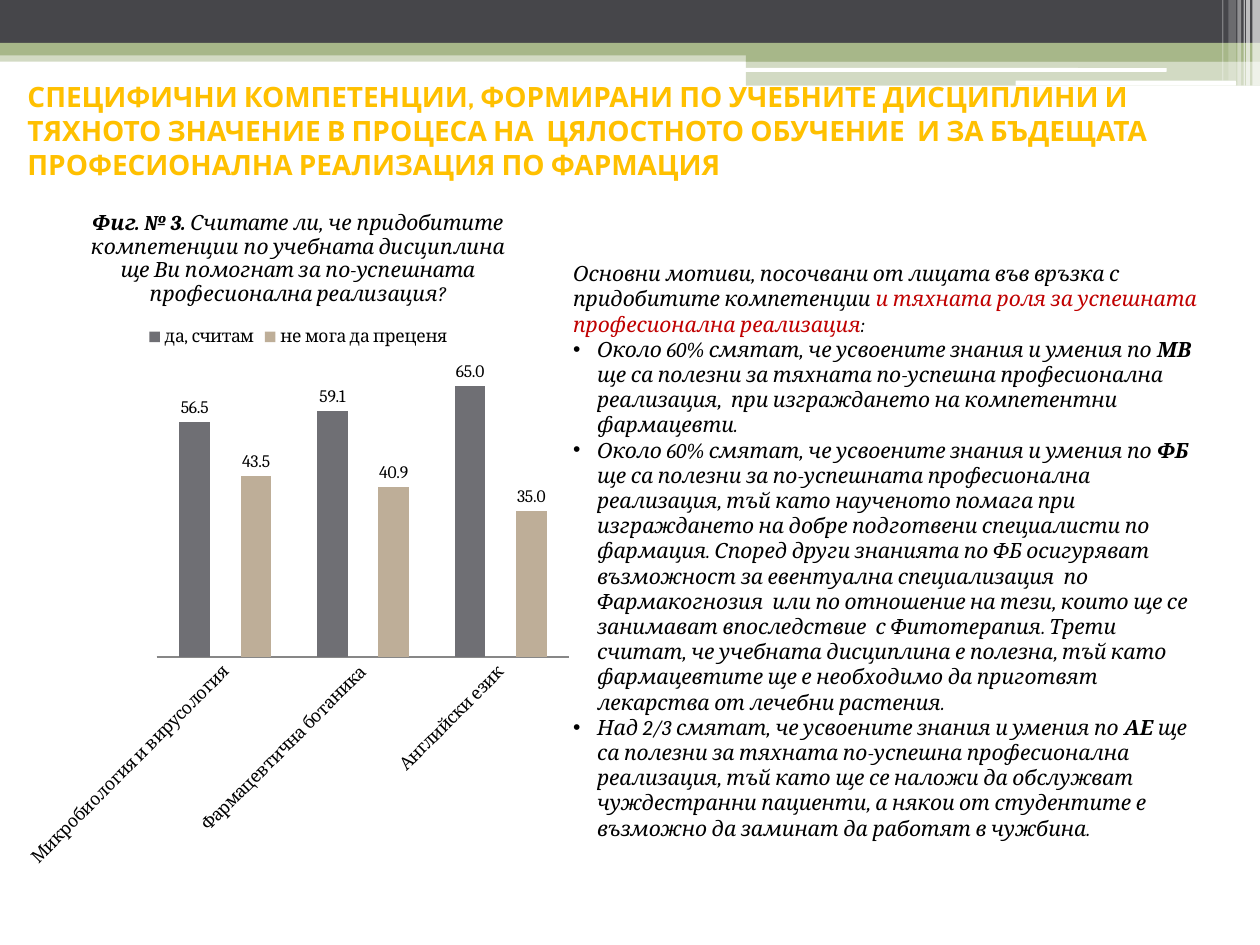
"""Build a slide on competencies with a clustered column chart and a list of motives."""
from typing import NamedTuple, Optional

from lxml.etree import SubElement
from pptx import Presentation
from pptx.chart.data import CategoryChartData
from pptx.dml.color import RGBColor
from pptx.enum.chart import XL_CHART_TYPE as ChartType
from pptx.enum.chart import XL_LABEL_POSITION as LabelPosition
from pptx.enum.chart import XL_LEGEND_POSITION as LegendPosition
from pptx.enum.chart import XL_TICK_MARK as TickMark
from pptx.enum.shapes import MSO_SHAPE as Preset
from pptx.enum.text import MSO_ANCHOR as Anchor
from pptx.oxml import parse_xml
from pptx.oxml.ns import nsdecls, qn
from pptx.util import Inches, Pt

BLACK = RGBColor(0x00, 0x00, 0x00)
WHITE = RGBColor(0xFF, 0xFF, 0xFF)
CHARCOAL = RGBColor(0x46, 0x46, 0x4A)
SAGE = RGBColor(0xA7, 0xB7, 0x89)
GOLD = RGBColor(0xFF, 0xC0, 0x00)
RED = RGBColor(0xC0, 0x00, 0x00)
GRAY = RGBColor(0x6F, 0x6F, 0x74)
SAND = RGBColor(0xBE, 0xAE, 0x98)
AXIS_GRAY = RGBColor(0x87, 0x87, 0x87)
HEADING_FONT = "Cabin"
BODY_FONT = "Cambria"
NUMBER_FORMAT = "0.0;[Red]0.0"


class Band(NamedTuple):
    left: float
    top: float
    width: float
    height: float
    color: RGBColor
    opacity: int = 100
    preset: Preset = Preset.RECTANGLE


class Phrase(NamedTuple):
    text: str
    color: RGBColor = BLACK
    bold: bool = False


class Answer(NamedTuple):
    name: str
    values: tuple[Optional[float], ...]
    color: RGBColor


BANDS = [
    Band(0, 0.4, 10, 0.09, SAGE, 50),
    Band(0, 0, 10, 0.34, CHARCOAL),
    Band(0, 0.34, 10, 0.1, SAGE),
    Band(5.92, 0.39, 4.08, 0.1, SAGE),
    Band(5.92, 0.48, 4.08, 0.2, SAGE, 50),
    Band(5.91, 0.54, 3.35, 0.03, WHITE, preset=Preset.ROUNDED_RECTANGLE),
    Band(8.06, 0.64, 1.75, 0.04, WHITE, preset=Preset.ROUNDED_RECTANGLE),
    Band(9.94, 0, 0.06, 0.68, WHITE, 65),
    Band(9.89, 0, 0.03, 0.68, WHITE, 65),
    Band(9.87, 0, 0.01, 0.68, WHITE, 60),
    Band(9.82, 0, 0.03, 0.68, WHITE, 40),
    Band(9.75, 0, 0.06, 0.64, WHITE, 20),
    Band(9.7, 0, 0.01, 0.64, WHITE, 30),
]
HEADING = (
    "СПЕЦИФИЧНИ КОМПЕТЕНЦИИ, ФОРМИРАНИ ПО УЧЕБНИТЕ ДИСЦИПЛИНИ И ТЯХНОТО ЗНАЧЕНИЕ "
    "В ПРОЦЕСА НА  ЦЯЛОСТНОТО ОБУЧЕНИЕ  И ЗА БЪДЕЩАТА ПРОФЕСИОНАЛНА РЕАЛИЗАЦИЯ ПО ФАРМАЦИЯ"
)
INTRO = [
    Phrase("Основни мотиви, посочвани от лицата във връзка с придобитите компетенции "),
    Phrase("и тяхната роля за успешната професионална реализация", RED),
    Phrase(":"),
]
ABOUT_60 = Phrase("Около 60% смятат, че усвоените знания и умения по ")
MOTIVES = [
    [ABOUT_60, Phrase("МВ", bold=True), Phrase(
        " ще са полезни за тяхната по-успешна професионална реализация,  при изграждането "
        "на компетентни фармацевти.")],
    [ABOUT_60, Phrase("ФБ", bold=True), Phrase(
        " ще са полезни за по-успешната професионална реализация, тъй като наученото помага "
        "при изграждането на добре подготвени специалисти по фармация. Според други знанията "
        "по ФБ осигуряват възможност за евентуална специализация  по Фармакогнозия  или по "
        "отношение на тези, които ще се занимават впоследствие  с Фитотерапия. Трети считат, "
        "че учебната дисциплина е полезна, тъй като фармацевтите ще е необходимо да приготвят "
        "лекарства от лечебни растения.")],
    [Phrase("Над 2/3 смятат, че усвоените знания и умения по "), Phrase("АЕ", bold=True), Phrase(
        " ще са полезни за тяхната по-успешна професионална реализация, тъй като ще се наложи "
        "да обслужват чуждестранни пациенти, а някои от студентите е възможно да заминат да "
        "работят в чужбина.")],
]
CHART_TITLE = [
    Phrase("Фиг. № 3.", bold=True),
    Phrase(" Считате ли, че придобитите компетенции по учебната дисциплина ще Ви помогнат "
           "за по-успешната професионална реализация?"),
]
SUBJECTS = ["Микробиология и вирусология", "Фармацевтична ботаника", "Английски език"]
ANSWERS = [
    Answer("да, считам", (56.5, 59.1, 65), GRAY),
    Answer("Series 2", (None, None, None), SAGE),
    Answer("не мога да преценя", (43.5, 40.9, 35), SAND),
]
SPACER_INDEX = 1


def set_font(font, name: str, size: float, color: RGBColor, bold=False, italic=False) -> None:
    font.name, font.size, font.bold, font.italic = name, Pt(size), bold, italic
    font.color.rgb = color


def add_band(slide, band: Band) -> None:
    bar = slide.shapes.add_shape(band.preset, *map(Inches, band[:4]))
    bar.shadow.inherit = False
    bar.fill.solid()
    bar.fill.fore_color.rgb = band.color
    bar.line.fill.background()
    if band.opacity < 100:
        tint = bar.element.spPr.find(f"{qn('a:solidFill')}/{qn('a:srgbClr')}")
        SubElement(tint, qn("a:alpha")).set("val", str(band.opacity * 1000))


def add_text_frame(slide, left: float, top: float, width: float, height: float):
    frame = slide.shapes.add_textbox(*map(Inches, (left, top, width, height))).text_frame
    frame.word_wrap = True
    return frame


def write_phrases(paragraph, phrases: list[Phrase]) -> None:
    for phrase in phrases:
        run = paragraph.add_run()
        run.text = phrase.text
        set_font(run.font, BODY_FONT, 12, phrase.color, phrase.bold, italic=True)


def add_bullet(paragraph) -> None:
    properties = paragraph._p.get_or_add_pPr()
    properties.set("marL", str(Inches(0.19)))
    properties.set("indent", str(-Inches(0.19)))
    SubElement(properties, qn("a:buFont")).set("typeface", "Arial")
    SubElement(properties, qn("a:buChar")).set("char", "•")


def add_heading(slide) -> None:
    frame = add_text_frame(slide, 0.12, 0.68, 9.76, 0.71)
    frame.vertical_anchor = Anchor.MIDDLE
    frame.text = HEADING
    set_font(frame.paragraphs[0].runs[0].font, HEADING_FONT, 16, GOLD, bold=True)


def add_motives(slide) -> None:
    frame = add_text_frame(slide, 4.45, 2.02, 5.21, 5.2)
    write_phrases(frame.paragraphs[0], INTRO)
    for motive in MOTIVES:
        paragraph = frame.add_paragraph()
        add_bullet(paragraph)
        write_phrases(paragraph, motive)


def add_answers_chart(slide) -> None:
    data = CategoryChartData(number_format=NUMBER_FORMAT)
    data.categories = SUBJECTS
    for answer in ANSWERS:
        data.add_series(answer.name, answer.values)
    area = map(Inches, (0.12, 1.47, 4.49, 5.51))
    chart = slide.shapes.add_chart(ChartType.COLUMN_CLUSTERED, *area, data).chart
    set_font(chart.font, BODY_FONT, 10, BLACK)
    write_phrases(chart.chart_title.text_frame.paragraphs[0], CHART_TITLE)
    chart.chart_title.include_in_layout = False

    chart.has_legend = True
    chart.legend.position = LegendPosition.TOP
    chart.legend.include_in_layout = False
    chart.legend._element.find(qn("c:legendPos")).addnext(parse_xml(
        f'<c:legendEntry {nsdecls("c")}><c:idx val="{SPACER_INDEX}"/>'
        '<c:delete val="1"/></c:legendEntry>'))

    subjects, scale = chart.category_axis, chart.value_axis
    subjects.major_tick_mark = TickMark.NONE
    subjects.format.line.color.rgb = AXIS_GRAY
    set_font(subjects.tick_labels.font, BODY_FONT, 10, BLACK)
    subjects._element.find(f"{qn('c:txPr')}/{qn('a:bodyPr')}").set("rot", "-2700000")
    scale.visible = False
    scale.has_major_gridlines = False
    scale.minimum_scale, scale.maximum_scale = 0, 70

    plot = chart.plots[0]
    plot.vary_by_categories = False
    plot.gap_width, plot.overlap = 150, 0
    for series, answer in zip(plot.series, ANSWERS):
        series.format.fill.solid()
        series.format.fill.fore_color.rgb = answer.color
        labels = series.data_labels
        labels.show_value = True
        labels.number_format, labels.number_format_is_linked = NUMBER_FORMAT, False
        labels.position = LabelPosition.OUTSIDE_END
        set_font(labels.font, BODY_FONT, 10, BLACK)

    plot_area = chart._chartSpace.chart.plotArea
    for old_layout in plot_area.findall(qn("c:layout")):
        plot_area.remove(old_layout)
    plot_area.insert(0, parse_xml(
        f'<c:layout {nsdecls("c")}><c:manualLayout><c:layoutTarget val="inner"/>'
        '<c:xMode val="edge"/><c:yMode val="edge"/><c:x val="0.25"/><c:y val="0.26"/>'
        '<c:w val="0.73"/><c:h val="0.42"/></c:manualLayout></c:layout>'))


def main() -> None:
    deck = Presentation()
    deck.slide_width, deck.slide_height = Inches(10), Inches(7.5)
    slide = deck.slides.add_slide(deck.slide_layouts[6])
    for band in BANDS:
        add_band(slide, band)
    add_heading(slide)
    add_motives(slide)
    add_answers_chart(slide)
    deck.save("out.pptx")


if __name__ == "__main__":
    main()
